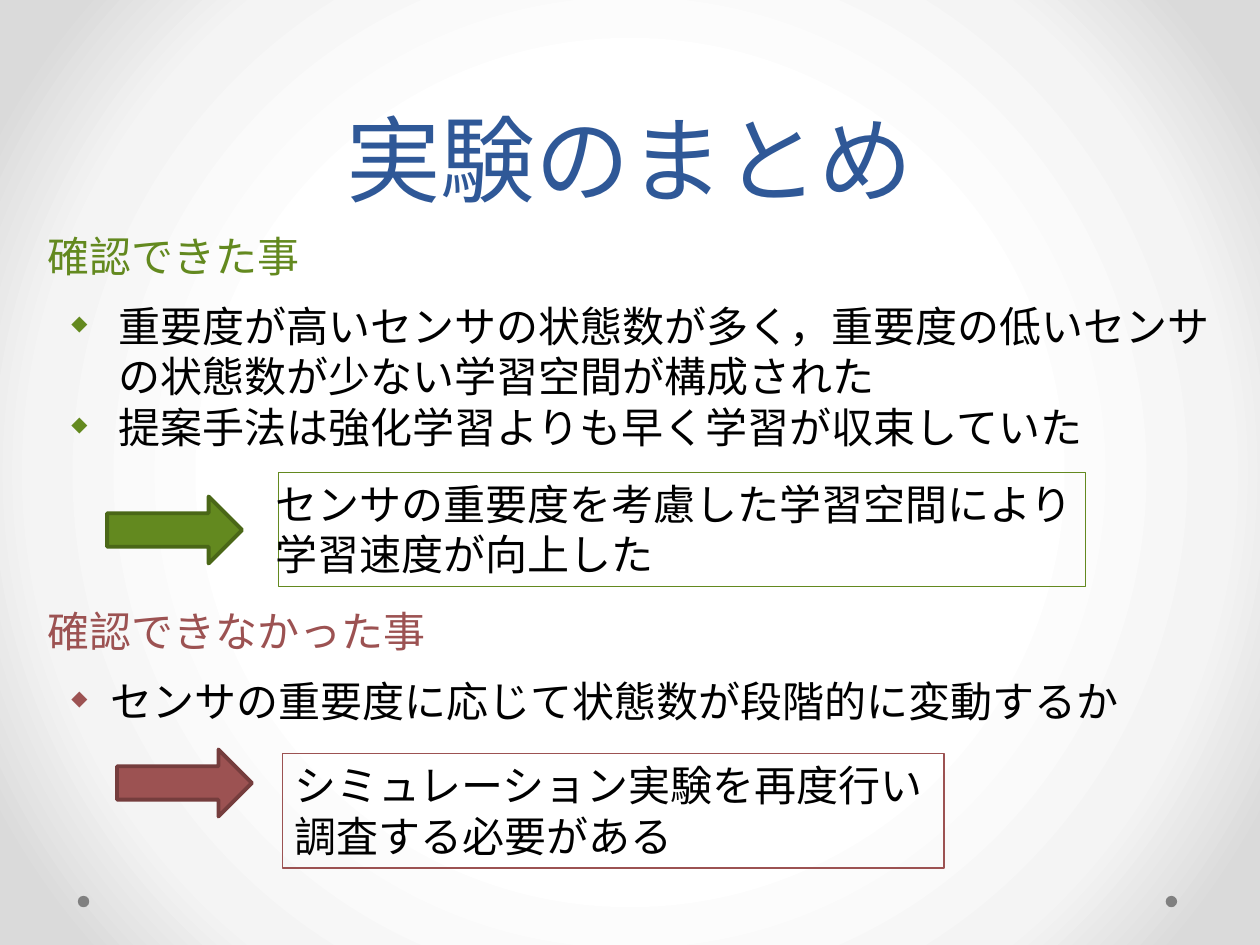
from lxml import etree
from pptx import Presentation
from pptx.dml.color import RGBColor
from pptx.enum.shapes import MSO_SHAPE
from pptx.enum.text import MSO_ANCHOR, MSO_AUTO_SIZE, PP_ALIGN
from pptx.oxml import parse_xml
from pptx.oxml.ns import nsdecls, qn
from pptx.util import Cm, Pt

RECT, OVAL, ARROW = MSO_SHAPE.RECTANGLE, MSO_SHAPE.OVAL, MSO_SHAPE.RIGHT_ARROW
LEFT, CENTER = PP_ALIGN.LEFT, PP_ALIGN.CENTER
TOP, BOTTOM = MSO_ANCHOR.TOP, MSO_ANCHOR.BOTTOM
GROW = MSO_AUTO_SIZE.SHAPE_TO_FIT_TEXT

FONT = "Vollkorn"
BLUE = RGBColor(0x2F, 0x58, 0x97)
GREEN = RGBColor(0x63, 0x89, 0x1F)
DARK_GREEN = RGBColor(0x4A, 0x67, 0x17)
RED = RGBColor(0x9C, 0x52, 0x52)
DARK_RED = RGBColor(0x75, 0x3D, 0x3D)
BLACK = RGBColor(0, 0, 0)
GRAY = RGBColor(0x80, 0x80, 0x80)
BACKGROUND_STOPS = [(50, "FFFFFF"), (76, "F4F4F4"), (92, "DADADA")]


def cm_box(x, y, w, h):
    return Cm(x), Cm(y), Cm(w), Cm(h)


def set_background(s):
    s.background.fill.gradient()
    old = s.background._cSld.find(".//" + qn("a:gradFill"))
    stops = "".join(f'<a:gs pos="{pos * 1000}"><a:srgbClr val="{color}"/></a:gs>'
                    for pos, color in BACKGROUND_STOPS)
    old.getparent().replace(old, parse_xml(
        f'<a:gradFill {nsdecls("a")} rotWithShape="1"><a:gsLst>{stops}</a:gsLst>'
        '<a:path path="circle"><a:fillToRect l="50000" t="50000" r="50000" b="50000"/>'
        '</a:path></a:gradFill>'))


def add_bullet(p, color, indent):
    pPr = p._p.get_or_add_pPr()
    pPr.set("marL", str(Cm(indent)))
    pPr.set("indent", str(-Cm(indent)))
    clr = etree.SubElement(pPr, qn("a:buClr"))
    etree.SubElement(clr, qn("a:srgbClr")).set("val", str(color))
    etree.SubElement(pPr, qn("a:buSzPct")).set("val", "50000")
    etree.SubElement(pPr, qn("a:buChar")).set("char", "◆")


def write(tf, lines, color=BLACK, size=24, align=LEFT, wrap=False):
    tf.word_wrap = wrap
    tf.vertical_anchor = TOP
    for i, line in enumerate(lines):
        p = tf.paragraphs[0] if i == 0 else tf.add_paragraph()
        p.alignment = align
        r = p.add_run()
        r.text = line
        r.font.name = FONT
        r.font.size = Pt(size)
        r.font.color.rgb = color


def add_text(s, box, lines, **style):
    tf = s.shapes.add_textbox(*cm_box(*box)).text_frame
    write(tf, lines, **style)
    tf.auto_size = GROW
    return tf


def add_shape(s, kind, box, fill=None, line=None, width=0.75):
    sp = s.shapes.add_shape(kind, *cm_box(*box))
    sp.shadow.inherit = False
    if fill is None:
        sp.fill.background()
    else:
        sp.fill.solid()
        sp.fill.fore_color.rgb = fill
    if line is None:
        sp.line.fill.background()
    else:
        sp.line.color.rgb = line
        sp.line.width = Pt(width)
    return sp


def add_title(s, box, text):
    tf = add_text(s, box, [text], color=BLUE, size=54, align=CENTER, wrap=True)
    tf.auto_size = MSO_AUTO_SIZE.NONE
    tf.vertical_anchor = BOTTOM
    tf.paragraphs[0].line_spacing = Pt(58)


def add_footer_dots(s, x, y, w, d):
    for left in (x, x + w - d):
        add_shape(s, OVAL, (left, y, d, d), fill=GRAY)


def add_section(s, x, y, color, dark, heading, heading_w, points, list_size,
                indent, wrap, arrow_at, note, note_box, note_text_box=None):
    """Heading, bullets, arrow and framed conclusion, all relative to (x, y)."""
    def at(dx, dy, w, h):
        return x + dx, y + dy, w, h

    # Heading and bullets
    add_text(s, at(0, 0, heading_w, 1.27), [heading], color=color)
    tf = add_text(s, at(0.48, 1.41, *list_size), points, wrap=wrap)
    for p in tf.paragraphs:
        add_bullet(p, color, indent)

    # Arrow to the conclusion
    add_shape(s, ARROW, at(*arrow_at, 2.72, 1.35), color, dark, 2.25)

    # Conclusion
    frame = add_shape(s, RECT, at(*note_box), line=color)
    if note_text_box:
        add_text(s, at(*note_text_box), note)
    else:
        write(frame.text_frame, note)


def main():
    prs = Presentation()
    prs.slide_width, prs.slide_height = Cm(25.4), Cm(19.05)
    s = prs.slides.add_slide(prs.slide_layouts[6])
    set_background(s)
    add_footer_dots(s, 1.57, 18.06, 22.16, 0.23)
    add_title(s, (1.27, 0, 22.86, 4.45), "実験のまとめ")

    add_section(
        s, 0.71, 4.52, GREEN, DARK_GREEN, "確認できた事", 5.64,
        ["重要度が高いセンサの状態数が多く，重要度の低いセンサの状態数が少ない学習空間が構成された",
         "提案手法は強化学習よりも早く学習が収束していた"],
        list_size=(23.9, 3.33), indent=0.95, wrap=True, arrow_at=(1.45, 5.49),
        note=["センサの重要度を考慮した学習空間により", "学習速度が向上した"],
        note_box=(4.9, 5, 16.28, 2.31), note_text_box=(4.6, 5, 16.76, 2.31))

    add_section(
        s, 0.71, 12.09, RED, DARK_RED, "確認できなかった事", 8.2,
        ["センサの重要度に応じて状態数が段階的に変動するか"],
        list_size=(21.84, 1.27), indent=0.79, wrap=False, arrow_at=(1.65, 3.02),
        note=["シミュレーション実験を再度行い", "調査する必要がある"],
        note_box=(4.98, 3.1, 13.34, 2.31))

    prs.save("out.pptx")


if __name__ == "__main__":
    main()
